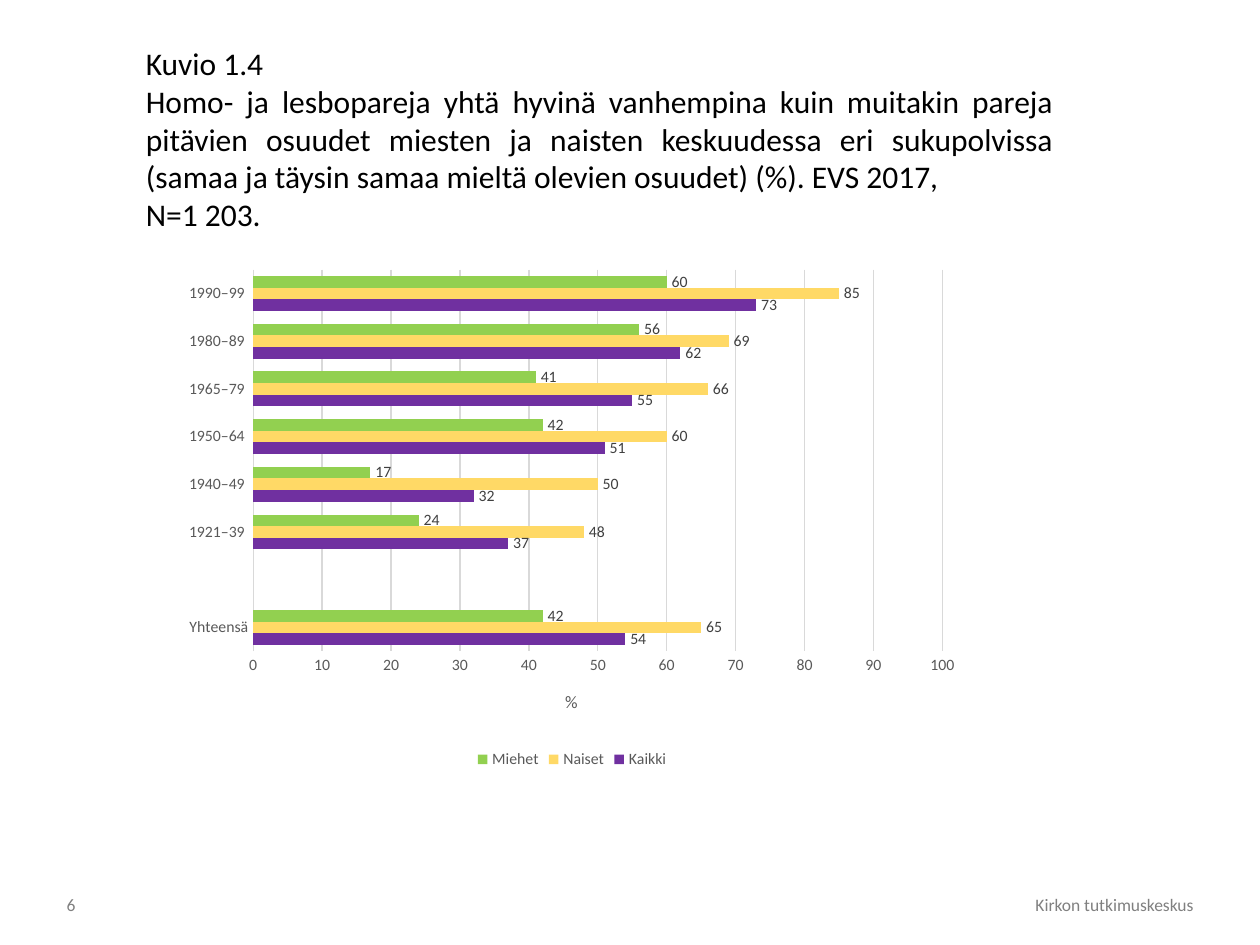
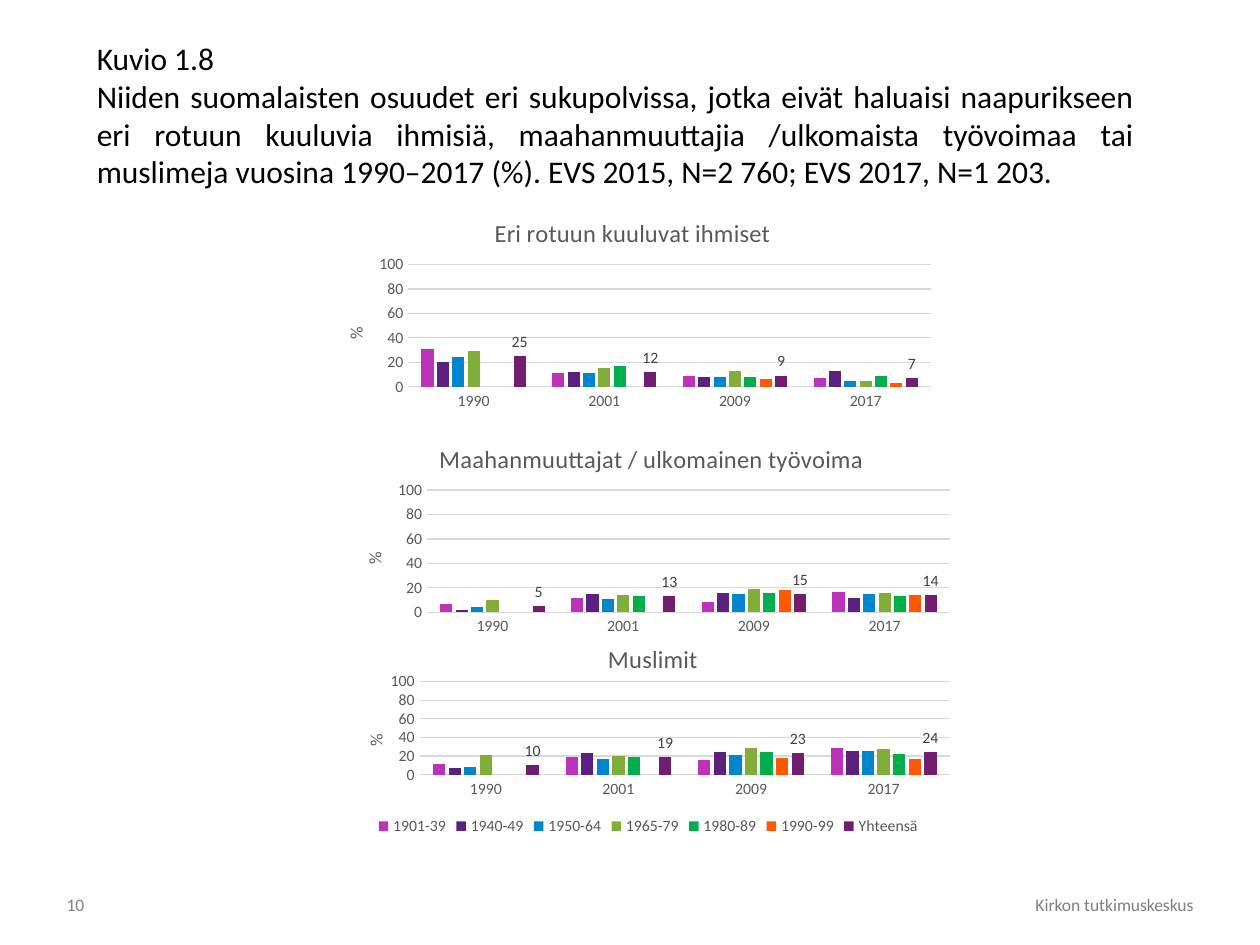
from lxml.etree import SubElement
from pptx import Presentation
from pptx.chart.data import CategoryChartData
from pptx.dml.color import RGBColor as RGB
from pptx.enum.chart import XL_CHART_TYPE as ChartType
from pptx.enum.chart import XL_LABEL_POSITION as LabelPos
from pptx.enum.chart import XL_LEGEND_POSITION as LegendPos
from pptx.enum.chart import XL_TICK_MARK as Tick
from pptx.enum.text import MSO_ANCHOR as Anchor
from pptx.enum.text import MSO_AUTO_SIZE as AutoSize
from pptx.enum.text import PP_ALIGN as Align
from pptx.oxml.ns import qn
from pptx.util import Inches, Pt


class Theme:
    font = "Calibri"
    black, footer, axis, label, grid = "000000", "808080", "595959", "404040", "D9D9D9"
    heading_size, chart_title_size, small_size, tick_size = 18, 14, 10, 9
    group_colors = {"Kaikki": "7030A0", "Naiset": "FFD966", "Miehet": "92D050"}
    generation_colors = {
        "1901-39": "BD32BA", "1940-49": "5A2181", "1950-64": "0085CF",
        "1965-79": "81AE38", "1980-89": "00AF4C", "1990-99": "FF5800",
        "Yhteensä": "711E70",
    }


def apply_format(target, size=None, color=None, **values):
    """Set plain attributes, and font settings when a size is given."""
    if size:
        values.update(name=Theme.font, size=Pt(size), bold=False)
        target.color.rgb = RGB.from_string(color)
    for key, value in values.items():
        setattr(target, key, value)


def place(element, frame, box):
    """Fix a chart part at box (inches) inside a chart of the given frame."""
    layout = element.find(qn("c:layout"))
    if layout is None:
        layout = SubElement(element, qn("c:layout"))
        element.insert(0, layout)
    manual = SubElement(layout, qn("c:manualLayout"))
    if len(box) == 4:
        SubElement(manual, qn("c:layoutTarget")).set("val", "inner")
    for mode in ("xMode", "yMode"):
        SubElement(manual, qn(f"c:{mode}")).set("val", "edge")
    width, height = frame[2:]
    for key, length, whole in zip("xywh", box, (width, height, width, height)):
        SubElement(manual, qn(f"c:{key}")).set("val", f"{length / whole:.4f}")


# Content: headings, page numbers and chart data
years = ["1990", "2001", "2009", "2017"]
birth_years = ["Yhteensä", "", "1921–39 ", "1940–49 ", "1950–64 ",
               "1965–79 ", "1980–89 ", "1990–99 "]

parenting = dict(
    kind=ChartType.BAR_CLUSTERED, title=None, frame=(1.38, 2.06, 6.32, 4.08),
    plot=(0.63, 0.08, 5.47, 3.03), unit_at=(3.08, 3.4), step=10, gap=110, overlap=0,
    legend=True, categories=birth_years, colors=Theme.group_colors,
    labelled=list(Theme.group_colors),
    rows=[
        [54, None, 37, 32, 51, 55, 62, 73],
        [65, None, 48, 50, 60, 66, 69, 85],
        [42, None, 24, 17, 42, 41, 56, 60],
    ])

neighbours = dict(
    kind=ChartType.COLUMN_CLUSTERED, plot=(0.75, 0.55, 4.15, 0.97), unit_at=(0.22, 1.02),
    step=20, gap=219, overlap=-27, legend=False, categories=years,
    colors=Theme.generation_colors, labelled=["Yhteensä"])
other_race = neighbours | dict(
    title="Eri rotuun kuuluvat ihmiset", title_at=(1.4, 0.13), frame=(2.49, 1.55, 5, 1.74),
    rows=[
        [31, 11, 9, 7], [20, 12, 8, 13], [24, 11, 8, 5], [29, 15, 13, 5],
        [None, 17, 8, 9], [None, None, 6, 3], [25, 12, 9, 7],
    ])
immigrants = neighbours | dict(
    title="Maahanmuuttajat / ulkomainen työvoima", title_at=(0.81, 0.13),
    frame=(2.64, 3.34, 5, 1.74),
    rows=[
        [7, 12, 8, 17], [2, 15, 16, 12], [4, 11, 15, 15], [10, 14, 19, 16],
        [None, 13, 16, 13], [None, None, 18, 14], [5, 13, 15, 14],
    ])
muslims = neighbours | dict(
    title="Muslimit", title_at=(2.14, 0.13), frame=(2.65, 4.93, 4.99, 1.74),
    plot=(0.68, 0.48, 4.21, 0.74), unit_at=(0.22, 0.87), legend=True,
    rows=[
        [11, 19, 16, 29], [7, 23, 24, 25], [8, 17, 21, 25], [21, 20, 29, 28],
        [None, 19, 24, 22], [None, None, 18, 17], [10, 19, 23, 24],
    ])

pages = [
    dict(number="6", heading_frame=(1.06, 0.3, 7.4, 1.62), charts=[parenting], heading=[
        "Kuvio 1.4",
        "Homo- ja lesbopareja yhtä hyvinä vanhempina kuin muitakin pareja pitävien "
        "osuudet miesten ja naisten keskuudessa eri sukupolvissa (samaa ja täysin "
        "samaa mieltä olevien osuudet) (%). EVS 2017,",
        "N=1 203.",
    ]),
    dict(number="10", heading_frame=(0.67, 0.26, 8.43, 1.31),
         charts=[other_race, immigrants, muslims], heading=[
        "Kuvio 1.8",
        "Niiden suomalaisten osuudet eri sukupolvissa, jotka eivät haluaisi naapurikseen "
        "eri rotuun kuuluvia ihmisiä, maahanmuuttajia /ulkomaista työvoimaa tai muslimeja "
        "vuosina 1990–2017 (%). EVS 2015, N=2 760; EVS 2017, N=1 203.",
    ]),
]

prs = Presentation()
prs.slide_width, prs.slide_height = Inches(10), Inches(7.5)

for page in pages:
    slide = prs.slides.add_slide(prs.slide_layouts[6])

    # Footer, page number and heading
    texts = [
        ((2.95, 7.06, 6.62, 0.24), ["Kirkon tutkimuskeskus"], Align.RIGHT,
         Theme.small_size, Theme.footer, Anchor.MIDDLE, AutoSize.NONE),
        ((0.43, 7.06, 0.47, 0.24), [page["number"]], Align.LEFT,
         Theme.small_size, Theme.footer, Anchor.MIDDLE, AutoSize.NONE),
        (page["heading_frame"], page["heading"], Align.JUSTIFY,
         Theme.heading_size, Theme.black, Anchor.TOP, AutoSize.SHAPE_TO_FIT_TEXT),
    ]
    for frame, lines, align, size, color, anchor, fit in texts:
        body = slide.shapes.add_textbox(*map(Inches, frame)).text_frame
        apply_format(body, word_wrap=True, vertical_anchor=anchor, auto_size=fit)
        body.text = "\n".join(lines)
        for paragraph in body.paragraphs:
            paragraph.alignment = align
            apply_format(paragraph.font, size, color)

    for item in page["charts"]:
        # Chart with its values
        data = CategoryChartData()
        data.categories = item["categories"]
        for name, row in zip(item["colors"], item["rows"]):
            data.add_series(name, row)
        frame = item["frame"]
        chart = slide.shapes.add_chart(item["kind"], *map(Inches, frame), data).chart
        apply_format(chart.font, Theme.small_size, Theme.black)
        place(chart._chartSpace.find(".//" + qn("c:plotArea")), frame, item["plot"])

        # Chart title and legend
        apply_format(chart, has_title=bool(item["title"]), has_legend=item["legend"])
        if item["title"]:
            caption = chart.chart_title
            caption.text_frame.text = item["title"]
            apply_format(caption.text_frame.paragraphs[0].font,
                         Theme.chart_title_size, Theme.axis)
            place(caption._element, frame, item["title_at"])
        if item["legend"]:
            apply_format(chart.legend, position=LegendPos.BOTTOM, include_in_layout=False)
            apply_format(chart.legend.font, Theme.tick_size, Theme.axis)

        # Axes, gridlines and unit
        years_axis, share_axis = chart.category_axis, chart.value_axis
        for axis in (years_axis, share_axis):
            apply_format(axis, major_tick_mark=Tick.NONE, minor_tick_mark=Tick.NONE)
            apply_format(axis.tick_labels.font, Theme.tick_size, Theme.axis)
        apply_format(share_axis, minimum_scale=0, maximum_scale=100,
                     major_unit=item["step"], has_major_gridlines=True, has_title=True)
        apply_format(share_axis.tick_labels, number_format="0", number_format_is_linked=False)
        share_axis.format.line.fill.background()
        for line in (years_axis.format.line, share_axis.major_gridlines.format.line):
            line.color.rgb = RGB.from_string(Theme.grid)
            line.width = Pt(0.75)
        unit = share_axis.axis_title
        unit.text_frame.text = "%"
        apply_format(unit.text_frame.paragraphs[0].font, Theme.small_size, Theme.axis)
        if item["kind"] == ChartType.COLUMN_CLUSTERED:
            unit.text_frame._txBody.bodyPr.set("rot", "-5400000")
        place(unit._element, frame, item["unit_at"])

        # Bars and value labels
        bars = chart.plots[0]
        apply_format(bars, gap_width=item["gap"], overlap=item["overlap"],
                     vary_by_categories=False)
        for series in bars.series:
            series.invert_if_negative = False
            series.format.fill.solid()
            series.format.fill.fore_color.rgb = RGB.from_string(item["colors"][series.name])
            if series.name in item["labelled"]:
                labels = series.data_labels
                apply_format(labels, show_value=True, position=LabelPos.OUTSIDE_END,
                             number_format="0", number_format_is_linked=False)
                apply_format(labels.font, Theme.tick_size, Theme.label)

prs.save("out.pptx")
